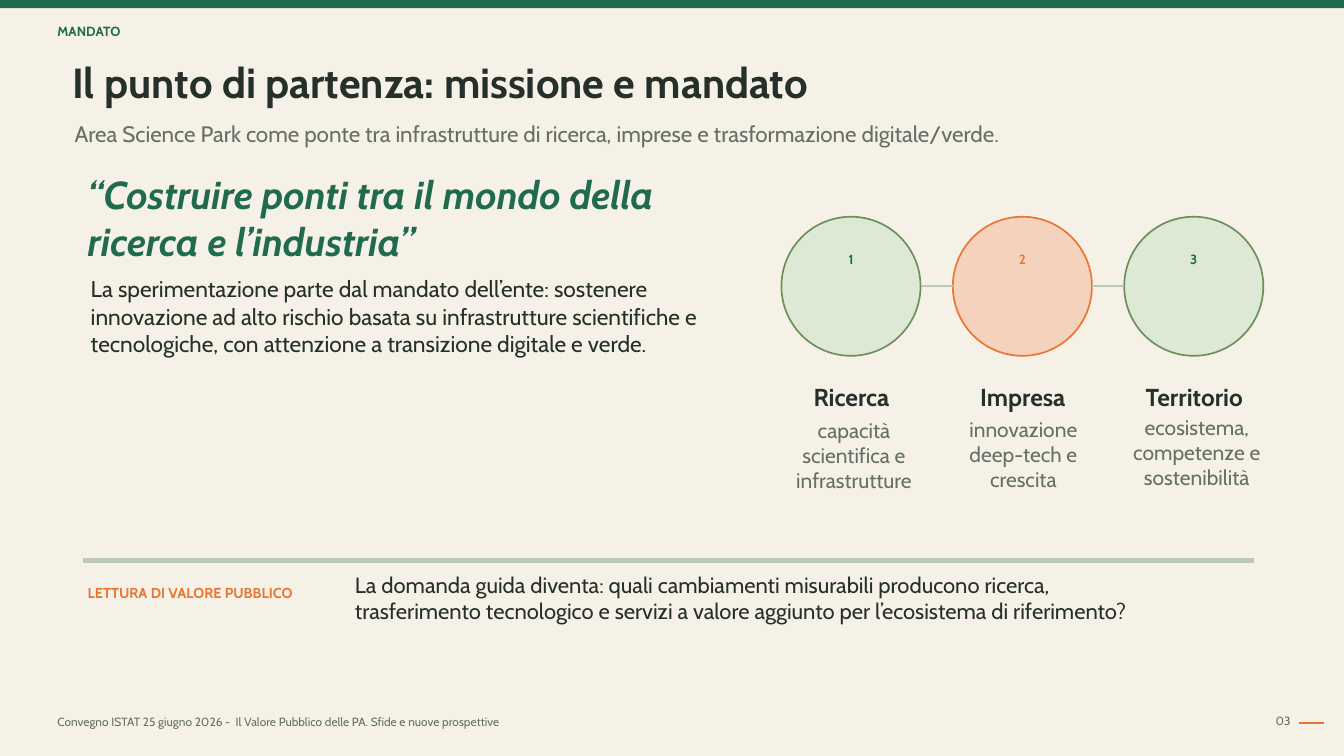
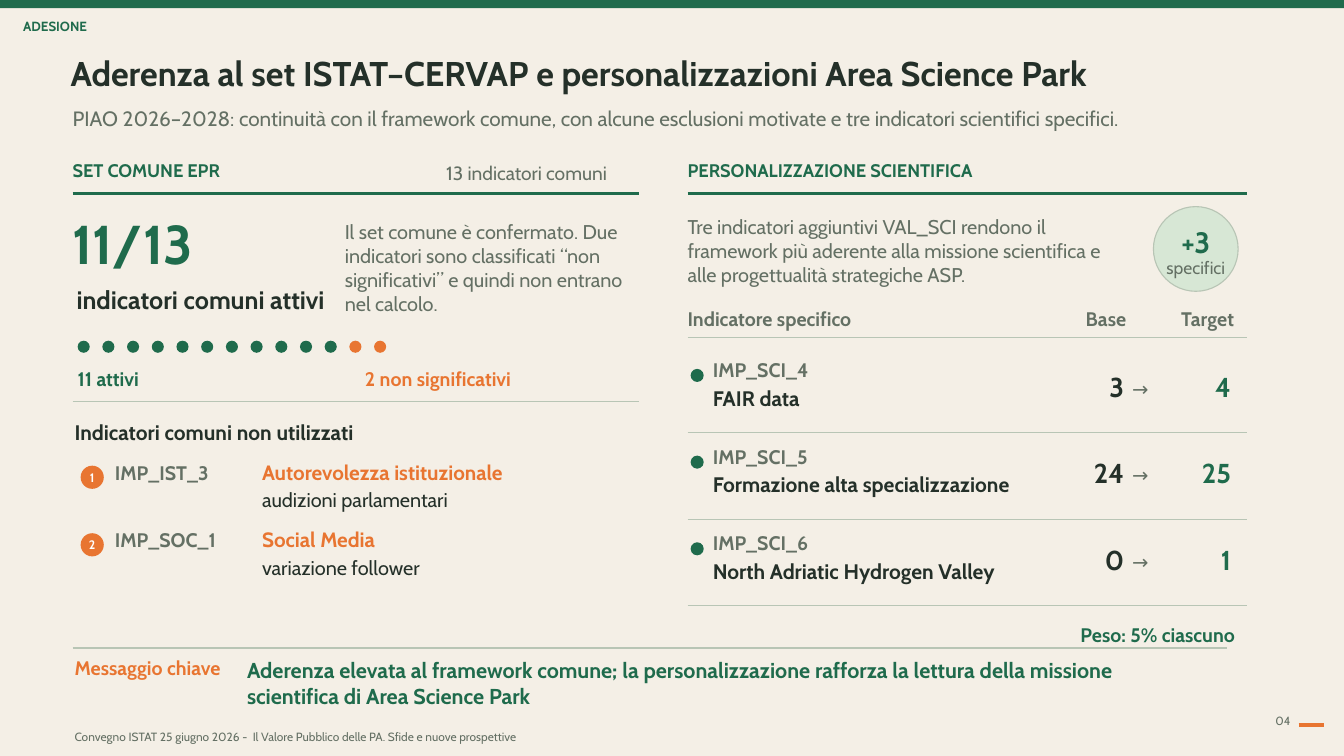
import pptx
import pptx.dml.color
import pptx.enum.shapes
import pptx.enum.text
import pptx.oxml
import pptx.oxml.ns
import pptx.util
from lxml import etree
from pptx.util import Inches

RGBColor = pptx.dml.color.RGBColor
ALIGN = pptx.enum.text.PP_ALIGN
ANCHOR = pptx.enum.text.MSO_ANCHOR
OVAL = pptx.enum.shapes.MSO_SHAPE.OVAL
BAND = pptx.enum.shapes.MSO_SHAPE.RECTANGLE
STRAIGHT = pptx.enum.shapes.MSO_CONNECTOR.STRAIGHT
qn = pptx.oxml.ns.qn

FONT = "Cabin"
GREEN = RGBColor(0x1F, 0x6B, 0x4C)
ORANGE = RGBColor(0xE8, 0x75, 0x31)
INK = RGBColor(0x24, 0x30, 0x29)
GREY = RGBColor(0x64, 0x70, 0x64)
WHITE = RGBColor(0xFF, 0xFF, 0xFF)
IVORY = RGBColor(0xF6, 0xF1, 0xE7)
CREAM = RGBColor(0xF4, 0xEF, 0xE6)
SAGE = RGBColor(0xBC, 0xC9, 0xB8)
RULE = RGBColor(0xB8, 0xC5, 0xB5)
LEAF = RGBColor(0xDD, 0xE8, 0xD5)
LEAF_EDGE = RGBColor(0x6C, 0x8F, 0x5A)
MINT = RGBColor(0xD7, 0xE7, 0xD5)
PEACH = RGBColor(0xF5, 0xD0, 0xB8)

FOOTER = "Convegno ISTAT 25 giugno 2026 -  Il Valore Pubblico delle PA. Sfide e nuove prospettive"


class Deck:
    """Holds the presentation, its style and the slide being built."""

    def __init__(self):
        self.prs = pptx.Presentation()
        self.prs.slide_width = Inches(13.33)
        self.prs.slide_height = Inches(7.5)
        self.slide = None

    def start(self, background):
        self.slide = self.prs.slides.add_slide(self.prs.slide_layouts[6])
        fill = self.slide.background.fill
        fill.solid()
        fill.fore_color.rgb = background

    def frame(self, tag, tag_at, number, footer_at, dash_y, dash_weight):
        """Top band, section tag, footer and page number."""
        band = self.slide.shapes.add_shape(BAND, 0, 0, self.prs.slide_width, Inches(0.08))
        self.paint(band, GREEN)
        self.text(tag, *tag_at, 3.3, 0.22, 9.5, GREEN, bold=True)
        self.text(FOOTER, *footer_at, 10.9, 0.22, 8.5, GREY)
        self.text(number, 12.38, 7.08, 0.42, 0.22, 8.5, GREY, align=ALIGN.RIGHT)
        self.rule(12.88, dash_y, 0.25, ORANGE, dash_weight)

    def heading(self, title, title_at, size, subtitle, subtitle_at, subtitle_size):
        self.text(title, *title_at, 12, 0.5, size, INK, bold=True)
        self.text(subtitle, *subtitle_at, 11.65, 0.31, subtitle_size, GREY)

    def paint(self, shape, fill, edge=None, weight=1.2):
        shape.shadow.inherit = False
        shape.fill.solid()
        shape.fill.fore_color.rgb = fill
        if edge is None:
            shape.line.fill.background()
        else:
            shape.line.color.rgb = edge
            shape.line.width = pptx.util.Pt(weight)

    def fill_in(self, paragraph, words, size, color, bold=False, italic=False, align=ALIGN.LEFT):
        """Set the words of a paragraph and format them."""
        paragraph.text = words
        paragraph.alignment = align
        for run in paragraph.runs:
            run.font.name = FONT
            run.font.size = pptx.util.Pt(size)
            run.font.color.rgb = color
            run.font.bold = bold
            run.font.italic = italic

    def margins(self, box, top=0, right=0, bottom=0, left=0):
        box.margin_top = Inches(top)
        box.margin_right = Inches(right)
        box.margin_bottom = Inches(bottom)
        box.margin_left = Inches(left)

    def text(self, words, x, y, width, height, size, color, **style):
        box = self.slide.shapes.add_textbox(Inches(x), Inches(y), Inches(width), Inches(height))
        frame = box.text_frame
        frame.word_wrap = True
        self.margins(frame)
        self.fill_in(frame.paragraphs[0], words, size, color, **style)

    def rule(self, x, y, width, color, weight):
        line = self.slide.shapes.add_connector(
            STRAIGHT, Inches(x), Inches(y), Inches(x + width), Inches(y))
        line.line.color.rgb = color
        line.line.width = pptx.util.Pt(weight)
        etree.SubElement(line._element.spPr, qn("a:effectLst"))

    def circle(self, x, y, diameter, fill, edge=None, weight=1.2, labels=(),
               anchor=ANCHOR.MIDDLE, top=0, opacity=100):
        """Circle with centred labels, each given as (words, size, colour, bold)."""
        shape = self.slide.shapes.add_shape(
            OVAL, Inches(x), Inches(y), Inches(diameter), Inches(diameter))
        self.paint(shape, fill, edge, weight)
        if opacity < 100:
            color = shape._element.spPr.find(qn("a:solidFill"))[0]
            etree.SubElement(color, qn("a:alpha"), val=str(opacity * 1000))
        frame = shape.text_frame
        frame.word_wrap = False
        frame.vertical_anchor = anchor
        self.margins(frame, top=top)
        for index, (words, size, ink, bold) in enumerate(labels):
            paragraph = frame.add_paragraph() if index else frame.paragraphs[0]
            self.fill_in(paragraph, words, size, ink, bold=bold, align=ALIGN.CENTER)
            if index:
                paragraph.line_spacing = 0.9

    def borders(self, cell, top, bottom):
        """Draw only the horizontal edges asked for."""
        properties = cell._tc.get_or_add_tcPr()
        edges = (("L", False), ("R", False), ("T", top), ("B", bottom))
        for position, (side, shown) in enumerate(edges):
            edge = etree.Element(qn("a:ln" + side), w=str(int(pptx.util.Pt(0.8))))
            paint = etree.SubElement(edge, qn("a:solidFill" if shown else "a:noFill"))
            if shown:
                etree.SubElement(paint, qn("a:srgbClr"), val=str(RULE))
            properties.insert(position, edge)

    def table(self, x, y, widths, heights):
        """Transparent table with a rule below each row."""
        table = self.slide.shapes.add_table(
            len(heights), len(widths), Inches(x), Inches(y),
            Inches(sum(widths)), Inches(sum(heights))).table
        table.first_row = table.horz_banding = False
        for column, width in zip(table.columns, widths):
            column.width = Inches(width)
        for index, (row, height) in enumerate(zip(table.rows, heights)):
            row.height = Inches(height)
            for cell in row.cells:
                self.margins(cell)
                cell.fill.background()
                cell.vertical_anchor = ANCHOR.BOTTOM
                self.borders(cell, top=index > 0, bottom=True)
        return table

    def cell(self, cell, words, size, color, right=0, bottom=0, **style):
        self.margins(cell, right=right, bottom=bottom)
        self.fill_in(cell.text_frame.paragraphs[0], words, size, color, **style)


def mission_slide(deck):
    deck.start(IVORY)
    deck.frame("MANDATO", (0.57, 0.23), "03", (0.57, 7.09), 7.17, 1.2)
    deck.heading(
        "Il punto di partenza: missione e mandato", (0.72, 0.56), 30,
        "Area Science Park come ponte tra infrastrutture di ricerca, imprese e "
        "trasformazione digitale/verde.", (0.74, 1.19), 16)
    deck.text("“Costruire ponti tra il mondo della ricerca e l’industria”",
              0.87, 1.69, 6.5, 0.92, 27.8, GREEN, bold=True, italic=True)
    deck.text("La sperimentazione parte dal mandato dell’ente: sostenere innovazione ad alto "
              "rischio basata su infrastrutture scientifiche e tecnologiche, con attenzione a "
              "transizione digitale e verde.", 0.9, 2.73, 6.11, 1.4, 16.2, INK)

    diameter, pitch = 1.38, 1.7
    pillars = (
        ("Ricerca", "capacità scientifica e infrastrutture", 7.74, 4.14, LEAF, LEAF_EDGE, GREEN, 100),
        ("Impresa", "innovazione deep-tech e crescita", 9.42, 4.13, PEACH, ORANGE, ORANGE, 92),
        ("Territorio", "ecosistema, competenze e sostenibilità", 11.14, 4.11, LEAF, LEAF_EDGE, GREEN, 100),
    )
    for index, (name, detail, detail_x, detail_y, fill, edge, ink, opacity) in enumerate(pillars):
        x = 7.75 + index * pitch
        deck.circle(x, 2.15, diameter, fill, edge, labels=[(str(index + 1), 9.5, ink, True)],
                    anchor=ANCHOR.TOP, top=0.14, opacity=opacity)
        deck.text(name, x - 0.08, 3.79, 1.55, 0.35, 17.5, INK, bold=True, align=ALIGN.CENTER)
        deck.text(detail, detail_x, detail_y, 1.46, 0.84, 15, GREY, align=ALIGN.CENTER)
        if index:
            gap = pitch - diameter
            deck.rule(x - gap, 2.84, gap, SAGE, 1.2)

    deck.rule(0.82, 5.56, 11.62, SAGE, 3)
    deck.text("LETTURA DI VALORE PUBBLICO", 0.87, 5.79, 2.6, 0.27, 10.3, ORANGE, bold=True)
    deck.text("La domanda guida diventa: quali cambiamenti misurabili producono ricerca, "
              "trasferimento tecnologico e servizi a valore aggiunto per l’ecosistema di "
              "riferimento?", 3.52, 5.67, 7.81, 0.76, 15.7, INK)


def common_set(deck):
    left, width = 0.72, 5.62
    deck.text("SET COMUNE EPR", left, 1.58, 2.25, 0.25, 13, GREEN, bold=True)
    deck.text("13 indicatori comuni", 3.77, 1.6, 2.25, 0.24, 13.7, GREY, align=ALIGN.RIGHT)
    deck.rule(left, 1.92, width, GREEN, 2)
    deck.text("11/13", left, 2.08, 2.05, 0.72, 39, GREEN, bold=True)
    deck.text("indicatori comuni attivi", 0.76, 2.82, 2.7, 0.36, 18, INK, bold=True)
    deck.text("Il set comune è confermato. Due indicatori sono classificati “non significativi” "
              "e quindi non entrano nel calcolo.", 3.42, 2.18, 2.82, 0.92, 14.2, GREY)
    active, total = 11, 13
    for index in range(total):
        deck.circle(0.77 + 2.94 * index / (total - 1), 3.38, 0.12,
                    GREEN if index < active else ORANGE)
    deck.text("11 attivi", 0.77, 3.64, 1.1, 0.2, 14, GREEN, bold=True)
    deck.text("2 non significativi", 3.62, 3.64, 2.1, 0.2, 14, ORANGE, bold=True)
    deck.rule(left, 3.98, width, RULE, 0.8)

    deck.text("Indicatori comuni non utilizzati", 0.74, 4.16, 3.55, 0.25, 15, INK, bold=True)
    unused = (("IMP_IST_3", "Autorevolezza istituzionale", "audizioni parlamentari"),
              ("IMP_SOC_1", "Social Media", "variazione follower"))
    for index, (code, name, detail) in enumerate(unused):
        y = 4.56 + 0.67 * index
        deck.circle(0.8, y + 0.06, 0.23, ORANGE, labels=[(str(index + 1), 8.8, WHITE, True)])
        deck.text(code, 1.14, y + 0.01, 1.38, 0.24, 14, GREY, bold=True)
        deck.text(name, 2.6, y, 3.1, 0.25, 14.8, ORANGE, bold=True)
        deck.text(detail, 2.6, y + 0.28, 3.2, 0.24, 14.2, INK)


def specific_set(deck):
    left, width = 6.82, 5.55
    deck.text("PERSONALIZZAZIONE SCIENTIFICA", left, 1.58, 3.85, 0.25, 13, GREEN, bold=True)
    deck.rule(left, 1.92, width, GREEN, 2)
    deck.circle(11.44, 2.05, 0.84, MINT, RULE, 0.8, top=0.05,
                labels=[("+3", 21, GREEN, True), ("specifici", 12.5, GREY, False)])
    deck.text("Tre indicatori aggiuntivi VAL_SCI rendono il framework più aderente alla missione "
              "scientifica e alle progettualità strategiche ASP.", left, 2.13, 4.3, 0.66, 14.2, GREY)

    top, heights = 3, (0.35, 0.94, 0.86, 0.86)
    table = deck.table(left, top, (3.58, 0.77, 0.28, 0.92), heights)
    headings = ((0, "Indicatore specifico", ALIGN.LEFT, 0),
                (1, "Base", ALIGN.RIGHT, 0), (3, "Target", ALIGN.RIGHT, 0.13))
    for column, words, align, right in headings:
        deck.cell(table.cell(0, column), words, 14, GREY, right=right, bottom=0.06,
                  bold=True, align=align)
    indicators = (("IMP_SCI_4", "FAIR data", "3", "4"),
                  ("IMP_SCI_5", "Formazione alta specializzazione", "24", "25"),
                  ("IMP_SCI_6", "North Adriatic Hydrogen Valley", "0", "1"))
    for row, (code, name, base, target) in enumerate(indicators, 1):
        label = table.cell(row, 0)
        deck.cell(label, code, 14, GREY, bottom=0.21, bold=True)
        label.margin_left = Inches(0.25)
        second_line = label.text_frame.add_paragraph()
        second_line.space_before = pptx.util.Pt(2.4)
        deck.fill_in(second_line, name, 15, INK, bold=True)
        deck.cell(table.cell(row, 1), base, 19.5, INK, right=0.02, bottom=0.28,
                  bold=True, align=ALIGN.RIGHT)
        deck.cell(table.cell(row, 2), "→", 14, GREY, bottom=0.31, align=ALIGN.CENTER)
        deck.cell(table.cell(row, 3), target, 19.5, GREEN, right=0.16, bottom=0.28,
                  bold=True, align=ALIGN.RIGHT)
        row_bottom = top + sum(heights[:row + 1])
        deck.circle(6.85, row_bottom - 0.63, 0.13, GREEN)
    deck.text("Peso: 5% ciascuno", 10.47, 6.18, 1.78, 0.24, 14, GREEN,
              bold=True, align=ALIGN.RIGHT)


def adherence_slide(deck):
    deck.start(CREAM)
    deck.frame("ADESIONE", (0.23, 0.18), "04", (0.74, 7.24), 7.19, 2.8)
    deck.heading(
        "Aderenza al set ISTAT–CERVAP e personalizzazioni Area Science Park", (0.7, 0.52), 24.5,
        "PIAO 2026–2028: continuità con il framework comune, con alcune esclusioni motivate "
        "e tre indicatori scientifici specifici.", (0.72, 1.05), 14.8)
    common_set(deck)
    specific_set(deck)
    deck.rule(0.72, 6.43, 11.45, RULE, 1.2)
    deck.text("Messaggio chiave", 0.74, 6.51, 1.5, 0.47, 14, ORANGE, bold=True)
    deck.text("Aderenza elevata al framework comune; la personalizzazione rafforza la lettura "
              "della missione scientifica di Area Science Park",
              2.45, 6.52, 9.05, 0.52, 15.4, GREEN, bold=True)


def main():
    deck = Deck()
    mission_slide(deck)
    adherence_slide(deck)
    deck.prs.save("out.pptx")


if __name__ == "__main__":
    main()
